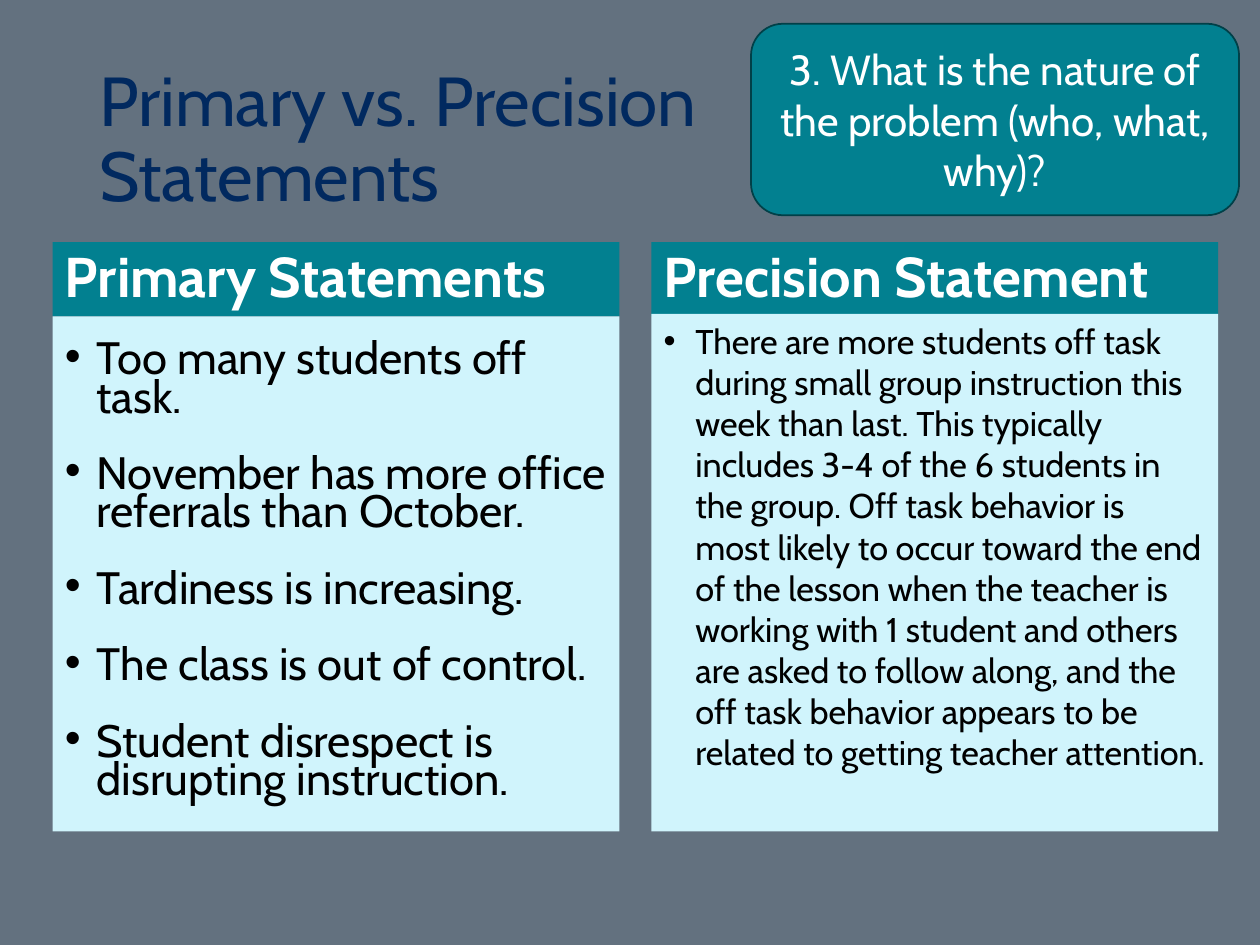
from dataclasses import dataclass, field
from typing import Optional

from lxml.etree import SubElement
from pptx import Presentation
from pptx.dml.color import RGBColor
from pptx.enum.shapes import MSO_SHAPE
from pptx.enum.text import MSO_ANCHOR, PP_ALIGN
from pptx.oxml.ns import qn
from pptx.util import Cm, Pt


@dataclass(frozen=True)
class Theme:
    font: str = "Cabin"
    back: str = "63717F"
    navy: str = "01295F"
    teal: str = "028090"
    edge: str = "014048"
    pale: str = "D0F4FC"
    white: str = "FFFFFF"
    black: str = "000000"
    title: float = 39.6
    head: float = 32
    list: float = 25.9
    prose: float = 19.6
    note: float = 24


@dataclass(frozen=True)
class Box:
    """Lengths are in centimetres, type sizes and gaps in points."""
    left: float
    top: float
    width: float
    height: float
    lines: list[str]
    size: float
    color: str
    fill: Optional[str] = None
    edge: Optional[str] = None
    kind: MSO_SHAPE = MSO_SHAPE.RECTANGLE
    bold: bool = False
    bullet: bool = False
    anchor: MSO_ANCHOR = MSO_ANCHOR.MIDDLE
    para: dict = field(default_factory=dict)
    gap: float = 0


THEME = Theme()


def rgb(code: str) -> RGBColor:
    return RGBColor.from_string(code)


def apply(target, values: dict) -> None:
    for name, value in values.items():
        setattr(target, name, value)


def add_bullet(para) -> None:
    props = para._p.get_or_add_pPr()
    apply_indent = {"marL": Cm(0.64), "indent": -Cm(0.64)}
    for name, value in apply_indent.items():
        props.set(name, str(int(value)))
    SubElement(props, qn("a:buFont")).set("typeface", "Arial")
    SubElement(props, qn("a:buChar")).set("char", "•")


def draw_text(frame, box: Box) -> None:
    apply(frame, {"word_wrap": True, "vertical_anchor": box.anchor})
    for i, line in enumerate(box.lines):
        para = frame.add_paragraph() if i else frame.paragraphs[0]
        apply(para, {"alignment": PP_ALIGN.LEFT} | box.para)
        if box.gap and i < len(box.lines) - 1:
            para.space_after = Pt(box.gap)
        if box.bullet:
            add_bullet(para)
        run = para.add_run()
        run.text = line
        apply(run.font, {"name": THEME.font, "size": Pt(box.size), "bold": box.bold})
        run.font.color.rgb = rgb(box.color)


def draw_box(slide, box: Box) -> None:
    place = [Cm(n) for n in (box.left, box.top, box.width, box.height)]
    if box.fill is None:
        shape = slide.shapes.add_textbox(*place)
    else:
        shape = slide.shapes.add_shape(box.kind, *place)
        shape.shadow.inherit = False
        shape.fill.solid()
        shape.fill.fore_color.rgb = rgb(box.fill)
        if box.edge:
            shape.line.color.rgb = rgb(box.edge)
            shape.line.width = Pt(1)
        else:
            shape.line.fill.background()
    draw_text(shape.text_frame, box)


def draw_panel(slide, left: float, split: float, head: str, lines: list[str],
               **body) -> None:
    """Draw a heading bar with its body, which starts at the split."""
    top, width, height, base = 4.88, 11.43, 1.5, 16.76
    above = {"space_before": Pt(10)}
    draw_box(slide, Box(left, top, width, height, [head], THEME.head, THEME.white,
                        THEME.teal, bold=True, para=above | {"line_spacing": 0.9}))
    para = above | body.pop("para", {})
    draw_box(slide, Box(left, split, width, base - split, lines, color=THEME.black,
                        fill=THEME.pale, bullet=True, para=para, **body))


def main() -> None:
    deck = Presentation()
    apply(deck, {"slide_width": Cm(25.4), "slide_height": Cm(19.05)})
    slide = deck.slides.add_slide(deck.slide_layouts[6])
    slide.background.fill.solid()
    slide.background.fill.fore_color.rgb = rgb(THEME.back)

    draw_box(slide, Box(1.75, 1.02, 13.39, 3.68, ["Primary vs. Precision Statements"],
                        THEME.title, THEME.navy, para={"line_spacing": 0.9}))
    draw_panel(slide, 1.06, 6.38, "Primary Statements", [
        "Too many students off task.",
        "November has more office referrals than October.",
        "Tardiness is increasing.",
        "The class is out of control.",
        "Student disrespect is disrupting instruction.",
    ], size=THEME.list, para={"line_spacing": 0.7}, gap=12)
    draw_panel(slide, 13.13, 6.33, "Precision Statement", [
        "There are more students off task during small group instruction this week "
        "than last. This typically includes 3-4 of the 6 students in the group. "
        "Off task behavior is most likely to occur toward the end of the lesson "
        "when the teacher is working with 1 student and others are asked to follow "
        "along, and the off task behavior appears to be related to getting teacher "
        "attention.",
    ], size=THEME.prose, anchor=MSO_ANCHOR.TOP)
    draw_box(slide, Box(15.14, 0.48, 9.84, 3.86,
                        ["3. What is the nature of the problem (who, what, why)?"],
                        THEME.note, THEME.white, THEME.teal, THEME.edge,
                        MSO_SHAPE.ROUNDED_RECTANGLE,
                        para={"alignment": PP_ALIGN.CENTER}))
    deck.save("out.pptx")


if __name__ == "__main__":
    main()
